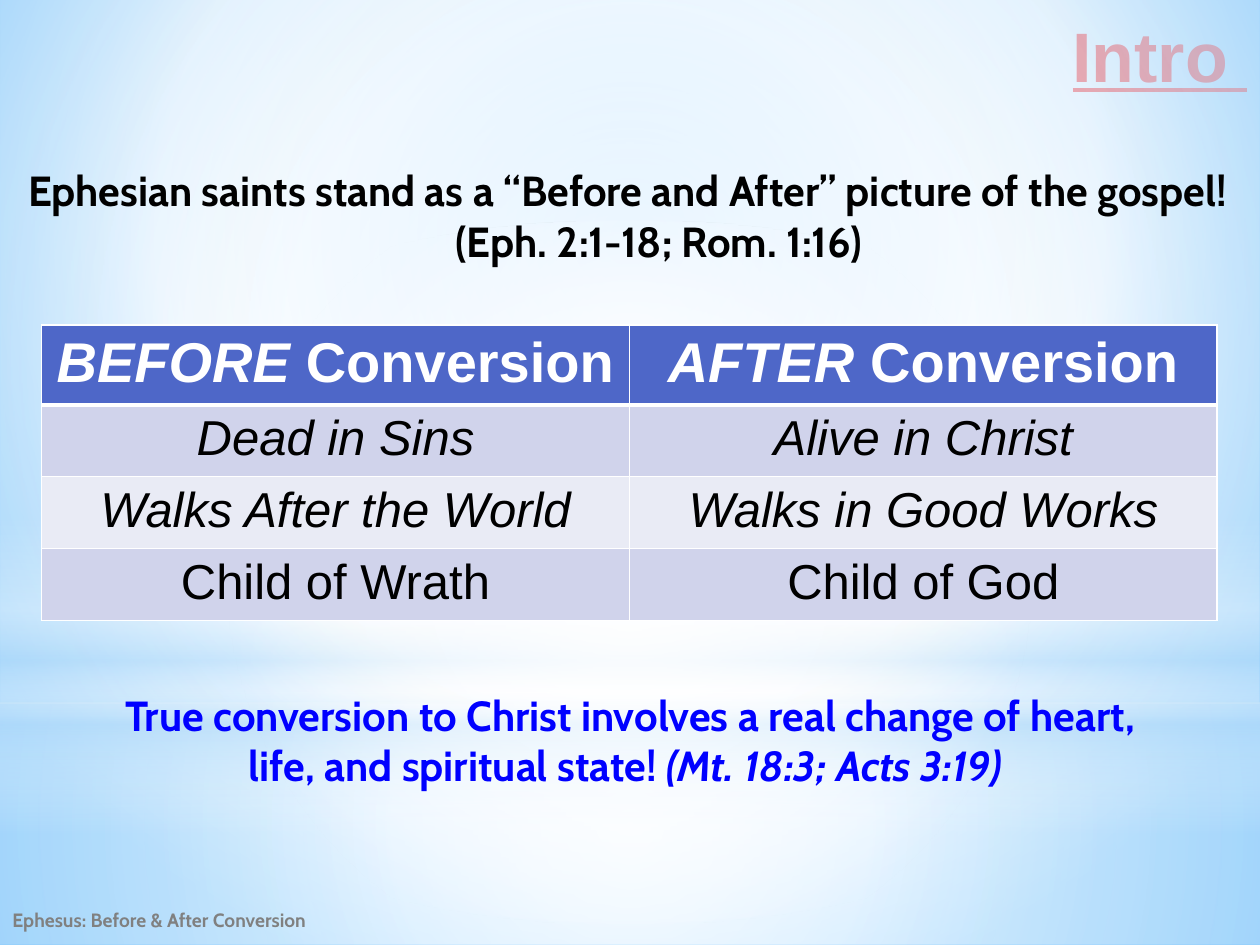
from lxml import etree
from pptx import Presentation
from pptx import util as u
from pptx.dml import color
from pptx.enum import shapes, text
from pptx.oxml import ns

HUES = {
    "white": "FFFFFF", "black": "000000", "red": "FF0000", "blue": "0000FF",
    "gray": "808080", "sky": "B4DCFA", "pale": "9ED5FF", "deep": "5BB9FF",
    "head": "4E67C8", "odd": "D0D3EB", "even": "E9EBF5",
}
MID = (50, 50, 50, 50)


def rgb(hue):
    """Return the named colour."""
    return color.RGBColor.from_string(HUES[hue])


def sub(node, tag, **attrs):
    """Add a child element with the given attributes."""
    return etree.SubElement(node, ns.qn(tag), {k: str(v) for k, v in attrs.items()})


def blend(root, stops, focus=None):
    """Swap the first solid fill under root for a circular or downward gradient."""
    old = root.find(".//" + ns.qn("a:solidFill"))
    grad = etree.Element(ns.qn("a:gradFill"), rotWithShape="1")
    row = sub(grad, "a:gsLst")
    for pos, hue, alpha in stops:
        stop = sub(row, "a:gs", pos=pos * 1000)
        tint = sub(stop, "a:srgbClr", val=HUES[hue])
        if alpha < 100:
            sub(tint, "a:alpha", val=alpha * 1000)
    if focus:
        ring = sub(grad, "a:path", path="circle")
        sub(ring, "a:fillToRect", **{k: v * 1000 for k, v in zip("ltrb", focus)})
    else:
        sub(grad, "a:lin", ang=90 * 60000, scaled=0)
    old.getparent().replace(old, grad)


def write(para, runs, size, hue, font, align, bold=True):
    """Add (words, italic) runs to a paragraph in one style."""
    para.alignment = align
    for words, slant in runs:
        run = para.add_run()
        run.text = words
        face = run.font
        face.name, face.size, face.bold, face.italic = font, u.Pt(size), bold, slant
        face.color.rgb = rgb(hue)


def add_glow(slide, kind, box, stops, focus=MID):
    """Lay one soft gradient shape on the backdrop."""
    shape = slide.shapes.add_shape(kind, *map(u.Inches, box))
    shape.shadow.inherit = False
    shape.fill.solid()
    blend(shape._element, stops, focus)
    shape.line.fill.background()


def add_back(slide):
    """Paint the background and its layers of light."""
    slide.background.fill.solid()
    blend(slide._element, [(0, "pale", 100), (60, "white", 100), (100, "deep", 100)],
          (20, 10, 20, 60))
    rect, oval = shapes.MSO_SHAPE.RECTANGLE, shapes.MSO_SHAPE.OVAL
    add_glow(slide, rect, (0, 5.58, 10, 1.92),
             [(0, "white", 91), (37, "white", 76), (100, "sky", 79)])
    add_glow(slide, rect, (0, 0, 10, 5.58),
             [(0, "white", 89), (48, "white", 62), (100, "sky", 79)])
    add_glow(slide, rect, (0, 4.12, 10, 2.5),
             [(0, "white", 0), (29, "white", 30), (45, "sky", 40),
              (55, "white", 26), (65, "sky", 60), (100, "white", 0)], None)
    add_glow(slide, oval, (0, 1.75, 10, 5.58), [(0, "white", 100), (56, "white", 0)])


def add_title(slide, box, words):
    """Move the title placeholder and fill it."""
    title = slide.shapes.title
    title.left, title.top, title.width, title.height = map(u.Inches, box)
    frame = title.text_frame
    frame.auto_size = text.MSO_AUTO_SIZE.NONE
    frame.vertical_anchor = text.MSO_ANCHOR.TOP
    frame.margin_top = u.Inches(0.1)
    para = frame.paragraphs[0]
    write(para, [(words, False)], 40, "red", "Arial", text.PP_ALIGN.RIGHT)
    para.runs[0].font.underline = True


def add_note(slide, box, lines, size, hue, align, hang=0, anchor=text.MSO_ANCHOR.TOP):
    """Add a wrapped text box, one paragraph per line, with a hanging indent."""
    frame = slide.shapes.add_textbox(*map(u.Inches, box)).text_frame
    frame.word_wrap = True
    frame.vertical_anchor = anchor
    for i, runs in enumerate(lines):
        para = frame.add_paragraph() if i else frame.paragraphs[0]
        if hang:
            props = para._p.get_or_add_pPr()
            props.set("marL", str(u.Inches(hang)))
            props.set("indent", str(-u.Inches(hang)))
        write(para, runs, size, hue, "Cabin", align)


def edge(cell, side, width):
    """Draw one white cell border."""
    line = sub(cell._tc.get_or_add_tcPr(), "a:ln" + side, w=u.Pt(width))
    sub(sub(line, "a:solidFill"), "a:srgbClr", val=HUES["white"])


def add_grid(slide, box, rows):
    """Build the table with a tall header and banded rows."""
    grid = slide.shapes.add_table(len(rows), len(rows[0]), *map(u.Inches, box)).table
    for r, row in enumerate(rows):
        head = r == 0
        grid.rows[r].height = u.Inches(0.62 if head else 0.57)
        for c, runs in enumerate(row):
            cell = grid.cell(r, c)
            for side in "LRTB":
                thick = (head and side == "B") or (r == 1 and side == "T")
                edge(cell, side, 3 if thick else 1)
            cell.fill.solid()
            cell.fill.fore_color.rgb = rgb("head" if head else "odd" if r % 2 else "even")
            write(cell.text_frame.paragraphs[0], runs, 32 if head else 28,
                  "white" if head else "black", "Arial", text.PP_ALIGN.CENTER, head)


def main():
    """Build and save the deck."""
    deck = Presentation()
    deck.slide_width, deck.slide_height = u.Inches(10), u.Inches(7.5)
    slide = deck.slides.add_slide(deck.slide_layouts[5])
    mid, left = text.PP_ALIGN.CENTER, text.PP_ALIGN.LEFT
    add_back(slide)
    add_note(slide, (0, 7.1, 3.67, 0.4), [[("Ephesus: Before & After Conversion", False)]],
             11, "gray", left, anchor=text.MSO_ANCHOR.MIDDLE)
    add_title(slide, (0, 0, 10, 0.66), "Intro ")
    add_note(slide, (-0.02, 1.26, 10, 0.91), [
        [("Ephesian saints stand as a “Before and After” picture of the gospel! "
          "(Eph. 2:1-18; Rom. 1:16)", False)],
    ], 24, "black", mid, 0.5)
    add_note(slide, (-0.01, 5.42, 10.02, 0.91), [
        [("True conversion to Christ involves a real change of heart,", False)],
        [("life, and spiritual state! ", False), ("(Mt. 18:3; Acts 3:19) ", True)],
    ], 24, "blue", mid, 0.5)
    add_grid(slide, (0.33, 2.58, 9.33, 2.33), [
        [[("BEFORE", True), (" Conversion", False)], [("AFTER", True), (" Conversion", False)]],
        [[("Dead in Sins", True)], [("Alive in Christ", True)]],
        [[("Walks After the World", True)], [("Walks in Good Works", True)]],
        [[("Child of Wrath", False)], [("Child of God", False)]],
    ])
    deck.save("out.pptx")


if __name__ == "__main__":
    main()
